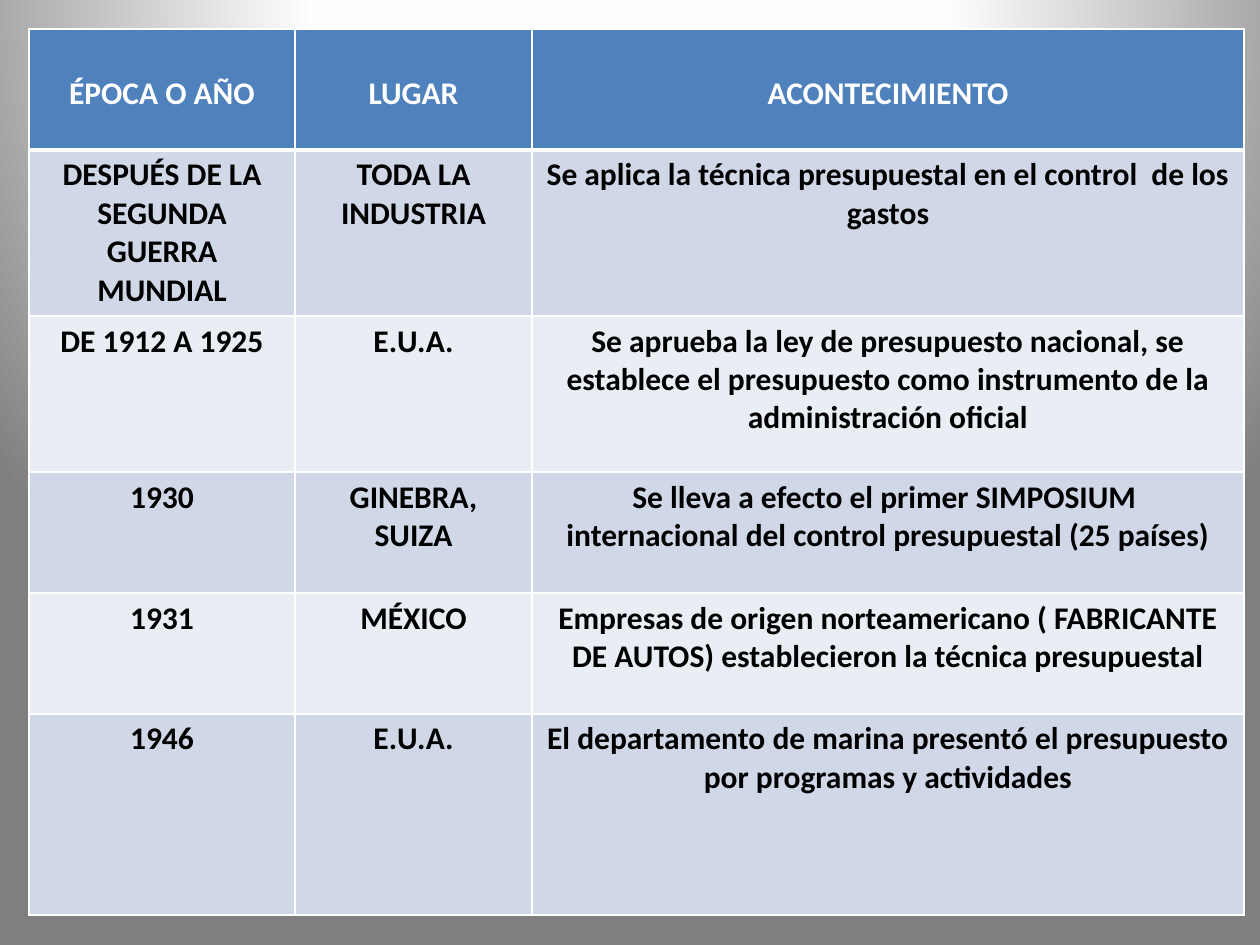
from lxml import etree
from pptx import Presentation
from pptx.dml.color import RGBColor as RGB
from pptx.enum.text import PP_ALIGN as Align
from pptx.oxml import parse_xml
from pptx.oxml.ns import nsdecls, qn
from pptx.util import Emu, Pt

HEAD = ["ÉPOCA O AÑO", "LUGAR", "ACONTECIMIENTO"]
EVENTS = [
    ("DESPUÉS DE LA SEGUNDA GUERRA MUNDIAL", "TODA LA INDUSTRIA",
     "Se aplica la técnica presupuestal en el control  de los gastos"),
    ("DE 1912 A 1925", "E.U.A.",
     "Se aprueba la ley de presupuesto nacional, se establece el presupuesto "
     "como instrumento de la administración oficial"),
    ("1930", "GINEBRA, SUIZA",
     "Se lleva a efecto el primer SIMPOSIUM \n"
     "internacional del control presupuestal (25 países)"),
    ("1931", "MÉXICO",
     "Empresas de origen norteamericano ( FABRICANTE DE AUTOS) "
     "establecieron la técnica presupuestal"),
    ("1946", "E.U.A.",
     "El departamento de marina presentó el presupuesto por programas "
     "y actividades"),
]
COLS = [266, 237, 712]
ROWS = [121, 166, 156, 121, 121, 201]
LEFT, TOP = 29, 29
BLUE, BANDS = "4F81BD", ["D0D8E8", "E9EDF4"]
STOPS = [(0, "FFFFFF"), (40, "FEFEFE"), (100, "7F7F7F")]


def px(n):
    return Emu(round(n * 914400 / 126))


def color(code):
    return RGB.from_string(code)


def write(cell, text, size=18, ink="000000", font="Calibri", top=6):
    cell.margin_top = px(top)
    cell.text = text
    for para in cell.text_frame.paragraphs:
        para.alignment = Align.CENTER
        for run in para.runs:
            run.font.name, run.font.size, run.font.bold = font, Pt(size), True
            run.font.color.rgb = color(ink)


def border(cell, code="FFFFFF", low=1):
    """Line all four sides; low is the width of the bottom one in points."""
    props = cell._tc.get_or_add_tcPr()
    for i, (side, width) in enumerate(zip("LRTB", (1, 1, 1, low))):
        line = etree.Element(qn(f"a:ln{side}"), w=str(Pt(width)))
        fill = etree.SubElement(line, qn("a:solidFill"))
        etree.SubElement(fill, qn("a:srgbClr"), val=code)
        props.insert(i, line)


def backdrop(slide):
    """Fill the background with a circular gradient centred above the slide."""
    slide.background.fill.solid()
    props = slide.element.xpath("//p:bgPr")[0]
    stops = "".join(f'<a:gs pos="{pos * 1000}"><a:srgbClr val="{code}"/></a:gs>'
                    for pos, code in STOPS)
    props.replace(props[0], parse_xml(
        f'<a:gradFill {nsdecls("a")} rotWithShape="1"><a:gsLst>{stops}</a:gsLst>'
        '<a:path path="circle"><a:fillToRect l="50000" t="-80000" r="50000" '
        'b="180000"/></a:path></a:gradFill>'))


def main():
    deck = Presentation()
    deck.slide_width, deck.slide_height = px(1260), px(945)
    slide = deck.slides.add_slide(deck.slide_layouts[6])
    backdrop(slide)

    table = slide.shapes.add_table(len(ROWS), len(COLS), px(LEFT), px(TOP),
                                   px(sum(COLS)), px(sum(ROWS))).table
    for col, width in zip(table.columns, COLS):
        col.width = px(width)
    for r, (row, texts) in enumerate(zip(table.rows, [HEAD, *EVENTS])):
        row.height = px(ROWS[r])
        for cell, text in zip(row.cells, texts):
            if r == 0:
                write(cell, text, ink="FFFFFF", top=45)
            else:
                write(cell, text)
            cell.fill.solid()
            cell.fill.fore_color.rgb = color(BANDS[(r - 1) % 2] if r else BLUE)
            border(cell, low=1 if r else 3)

    deck.save("out.pptx")


if __name__ == "__main__":
    main()
